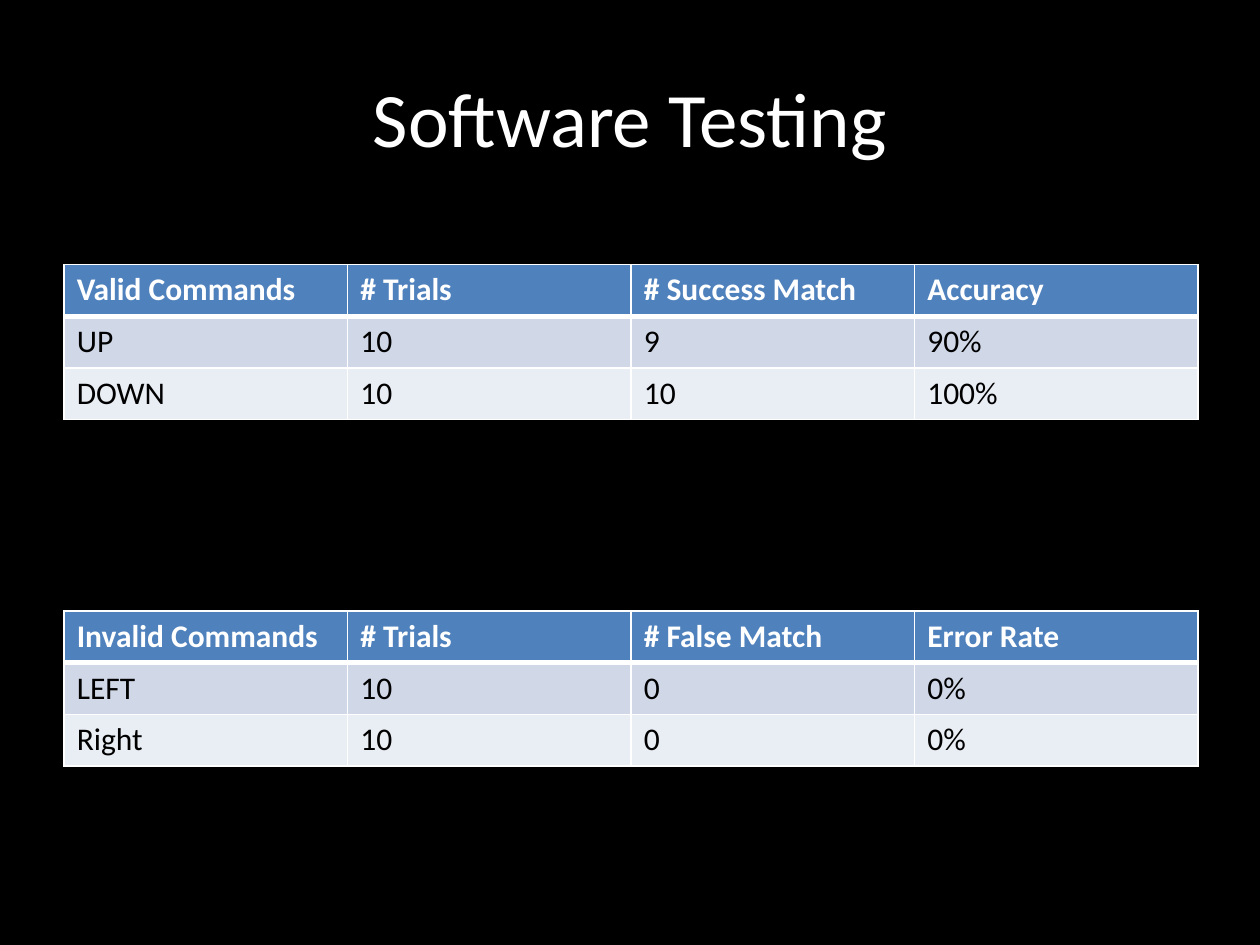
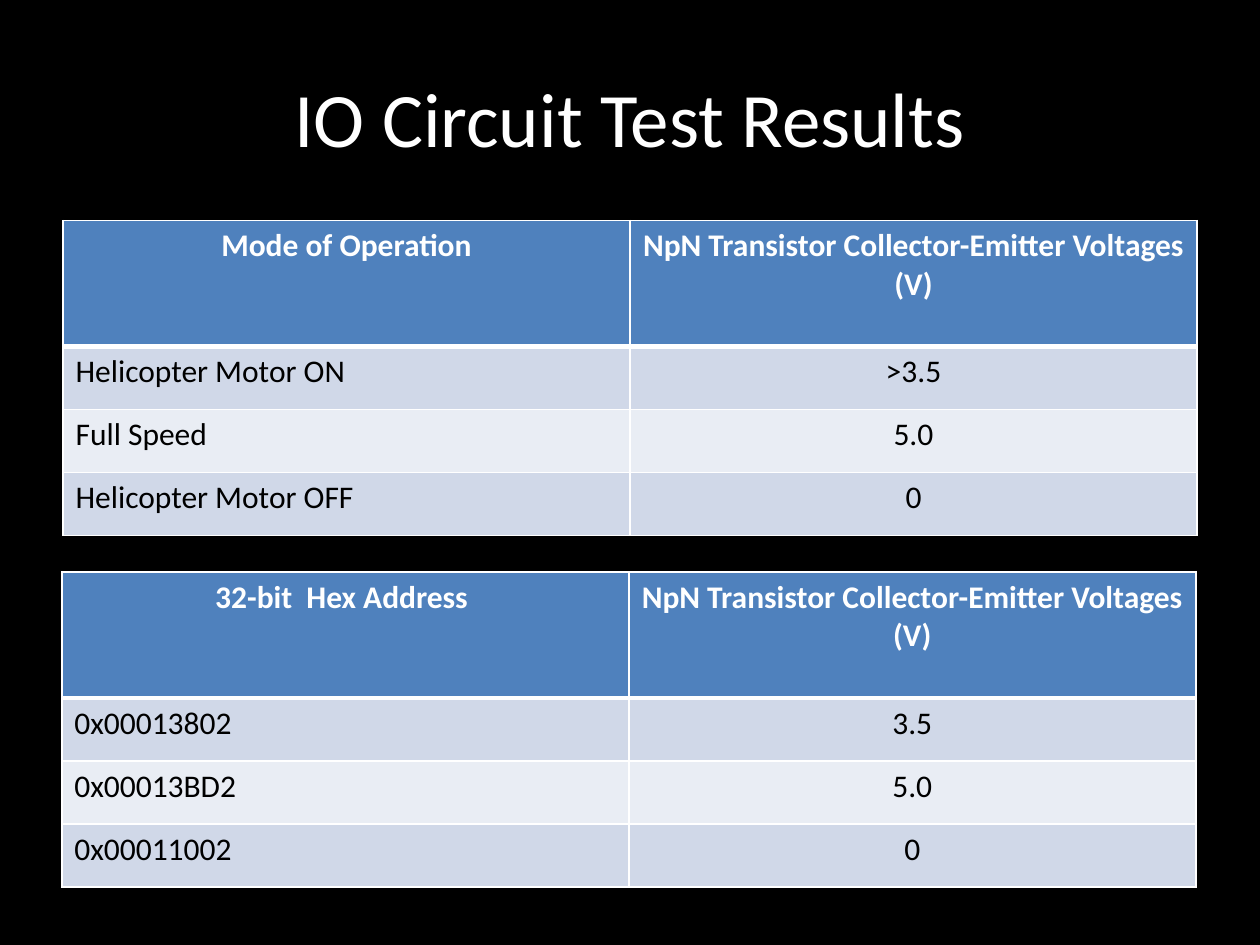
from lxml import etree
from pptx import Presentation
from pptx.dml.color import RGBColor
from pptx.enum.text import MSO_ANCHOR, PP_ALIGN
from pptx.oxml.ns import qn
from pptx.util import Inches, Pt

LEFT = PP_ALIGN.LEFT
CENTER = PP_ALIGN.CENTER
MIDDLE = MSO_ANCHOR.MIDDLE

FONT = "Calibri"
BLACK = "000000"
WHITE = "FFFFFF"
HEADER_FILL = "4F81BD"
BAND_FILLS = ["D0D8E8", "E9EDF4"]
TABLE_WIDTH = 9
VOLTAGE_HEADER = "NpN Transistor Collector-Emitter Voltages (V)"

SLIDES = [
    {
        "title": "Software Testing",
        "header_height": 0.41,
        "row_height": 0.41,
        "header_align": LEFT,
        "value_align": LEFT,
        "tables": [
            (0.51, 2.1, [
                ["Valid Commands", "# Trials", "# Success Match", "Accuracy"],
                ["UP", "10", "9", "90%"],
                ["DOWN", "10", "10", "100%"],
            ]),
            (0.51, 4.85, [
                ["Invalid Commands", "# Trials", "# False Match", "Error Rate"],
                ["LEFT", "10", "0", "0%"],
                ["Right", "10", "0", "0%"],
            ]),
        ],
    },
    {
        "title": "IO Circuit Test Results",
        "header_height": 1,
        "row_height": 0.5,
        "header_align": CENTER,
        "value_align": CENTER,
        "tables": [
            (0.5, 1.75, [
                ["Mode of Operation", VOLTAGE_HEADER],
                ["Helicopter Motor ON", ">3.5"],
                ["Full Speed", "5.0"],
                ["Helicopter Motor OFF", "0"],
            ]),
            (0.49, 4.54, [
                ["32-bit  Hex Address ", VOLTAGE_HEADER],
                ["0x00013802", "3.5"],
                ["0x00013BD2", "5.0"],
                ["0x00011002", "0"],
            ]),
        ],
    },
]


def color(hex_value):
    return RGBColor.from_string(hex_value)


def write_text(text_frame, text, size=18, font_color=BLACK, bold=False, align=LEFT):
    paragraph = text_frame.paragraphs[0]
    paragraph.alignment = align
    run = paragraph.add_run()
    run.text = text
    run.font.name = FONT
    run.font.size = Pt(size)
    run.font.bold = bold
    run.font.color.rgb = color(font_color)


presentation = Presentation()
presentation.slide_width = Inches(10)
presentation.slide_height = Inches(7.5)
blank_layout = presentation.slide_layouts[6]

for content in SLIDES:
    slide = presentation.slides.add_slide(blank_layout)
    slide.background.fill.solid()
    slide.background.fill.fore_color.rgb = color(BLACK)

    title_box = slide.shapes.add_textbox(Inches(0.5), Inches(0.3), Inches(9), Inches(1.25))
    title_box.text_frame.word_wrap = True
    title_box.text_frame.vertical_anchor = MIDDLE
    write_text(title_box.text_frame, content["title"], size=44, font_color=WHITE, align=CENTER)

    for left, top, rows in content["tables"]:
        column_count = len(rows[0])
        table_height = content["header_height"] + content["row_height"] * (len(rows) - 1)
        table = slide.shapes.add_table(
            len(rows), column_count,
            Inches(left), Inches(top), Inches(TABLE_WIDTH), Inches(table_height),
        ).table
        for column in table.columns:
            column.width = Inches(TABLE_WIDTH / column_count)

        for row_index, row in enumerate(rows):
            is_header = row_index == 0
            height = content["header_height"] if is_header else content["row_height"]
            table.rows[row_index].height = Inches(height)
            for column_index, text in enumerate(row):
                cell = table.cell(row_index, column_index)
                cell.fill.solid()
                if is_header:
                    cell.fill.fore_color.rgb = color(HEADER_FILL)
                    write_text(cell.text_frame, text, font_color=WHITE, bold=True,
                               align=content["header_align"])
                else:
                    cell.fill.fore_color.rgb = color(BAND_FILLS[(row_index - 1) % 2])
                    write_text(cell.text_frame, text,
                               align=content["value_align"] if column_index else LEFT)

                border_widths = {
                    "a:lnL": 1,
                    "a:lnR": 1,
                    "a:lnT": 3 if row_index == 1 else 1,
                    "a:lnB": 3 if is_header else 1,
                }
                cell_properties = cell._tc.get_or_add_tcPr()
                for position, (tag, width) in enumerate(border_widths.items()):
                    border = etree.Element(qn(tag), w=str(Pt(width)))
                    border_fill = etree.SubElement(border, qn("a:solidFill"))
                    etree.SubElement(border_fill, qn("a:srgbClr"), val=WHITE)
                    cell_properties.insert(position, border)

presentation.save("out.pptx")
